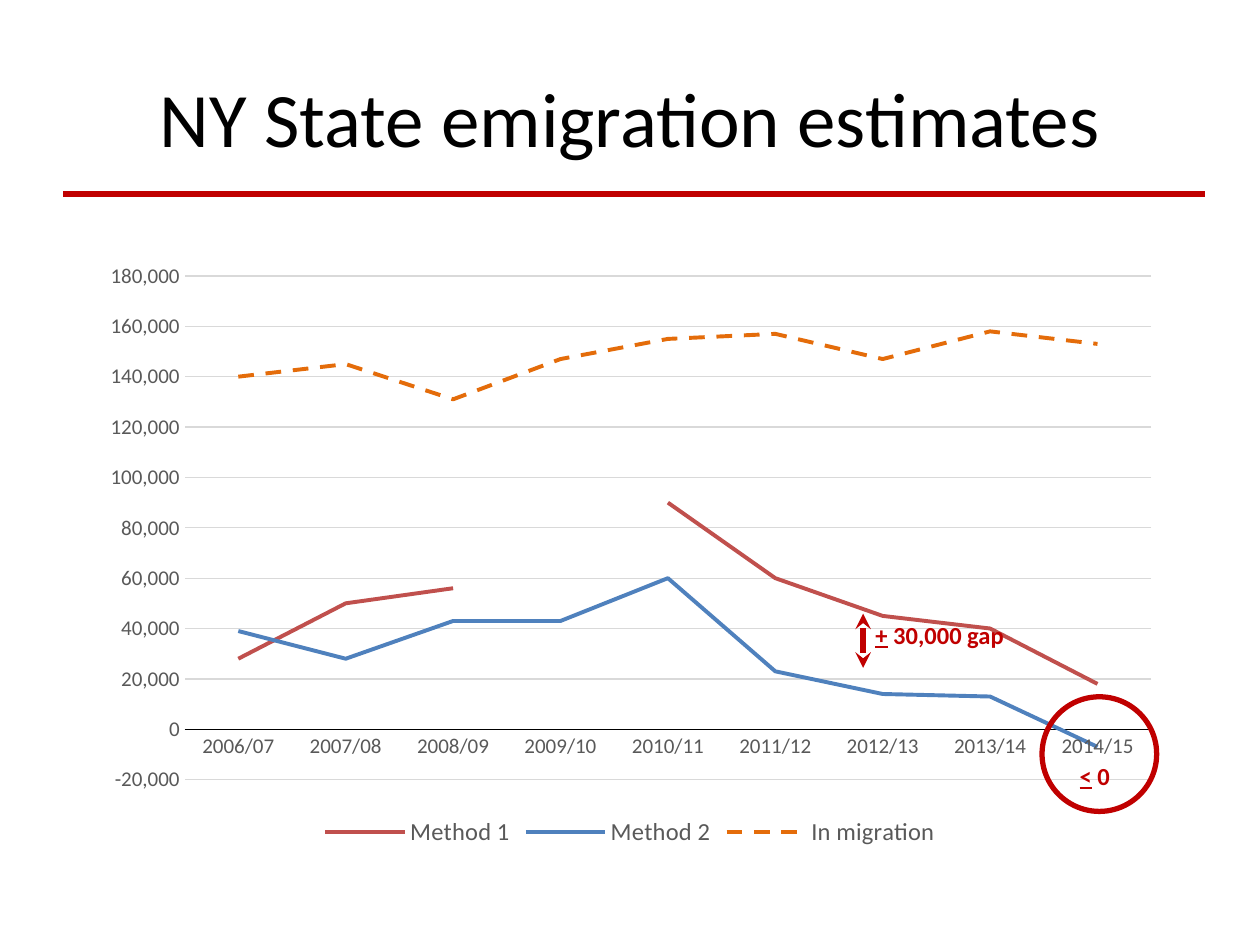
from pptx import Presentation
from pptx.chart.data import CategoryChartData
from pptx.dml.color import RGBColor
from pptx.enum.chart import XL_CHART_TYPE as ChartType, XL_LEGEND_POSITION as LegendPosition
from pptx.enum.chart import XL_TICK_MARK as TickMark
from pptx.enum.dml import MSO_LINE_DASH_STYLE as Dash
from pptx.enum.shapes import MSO_CONNECTOR_TYPE as ConnectorType, MSO_SHAPE as Shape
from pptx.enum.text import MSO_ANCHOR as Anchor, MSO_AUTO_SIZE as AutoSize, PP_ALIGN as Align
from pptx.oxml import parse_xml
from pptx.oxml.ns import nsdecls
from pptx.oxml.xmlchemy import OxmlElement
from pptx.util import Inches, Pt

FONT = "Calibri"
BLACK = RGBColor(0x00, 0x00, 0x00)
GRAY = RGBColor(0x59, 0x59, 0x59)
GRID = RGBColor(0xD9, 0xD9, 0xD9)
CRIMSON = RGBColor(0xC0, 0x00, 0x00)
RED = RGBColor(0xC0, 0x50, 0x4D)
BLUE = RGBColor(0x4F, 0x81, 0xBD)
ORANGE = RGBColor(0xE4, 0x6C, 0x0A)

YEARS = [f"{year}/{(year + 1) % 100:02d}" for year in range(2006, 2015)]
SERIES = [
    ("Method 1", RED, Dash.SOLID,
     [28000, 50000, 56000, None, 90000, 60000, 45000, 40000, 18000]),
    ("Method 2", BLUE, Dash.SOLID,
     [39000, 28000, 43000, 43000, 60000, 23000, 14000, 13000, -7000]),
    ("In migration", ORANGE, Dash.DASH,
     [140000, 145000, 131000, 147000, 155000, 157000, 147000, 158000, 153000]),
]


def style_font(font, size, color, bold=False):
    font.name = FONT
    font.size = Pt(size)
    font.bold = bold
    font.color.rgb = color


def style_line(line, color, width):
    line.color.rgb = color
    line.width = Pt(width)


def set_title(slide, text):
    title = slide.shapes.title
    title.left, title.top = Inches(0.5), Inches(0.3)
    title.width, title.height = Inches(9), Inches(1.25)
    frame = title.text_frame
    frame.text = text
    frame.vertical_anchor = Anchor.MIDDLE
    para = frame.paragraphs[0]
    para.alignment = Align.CENTER
    style_font(para.runs[0].font, 44, BLACK)


def add_line(slide, start, end, arrowheads=False):
    points = [Inches(value) for value in (*start, *end)]
    connector = slide.shapes.add_connector(ConnectorType.STRAIGHT, *points)
    style_line(connector.line, CRIMSON, 3)
    if arrowheads:
        outline = connector.line._get_or_add_ln()
        for tag in ("a:headEnd", "a:tailEnd"):
            head = OxmlElement(tag)
            head.set("type", "stealth")
            outline.append(head)
    connector._element.spPr.append(OxmlElement("a:effectLst"))


def add_note(slide, left, top, width, symbol, text):
    """Add a bold note whose leading symbol is underlined."""
    box = slide.shapes.add_textbox(Inches(left), Inches(top), Inches(width), Inches(0.34))
    frame = box.text_frame
    frame.word_wrap = True
    frame.auto_size = AutoSize.SHAPE_TO_FIT_TEXT
    para = frame.paragraphs[0]
    for words, underlined in ((symbol, True), (text, False)):
        span = para.add_run()
        span.text = words
        style_font(span.font, 14, CRIMSON, bold=True)
        span.font.underline = underlined


def add_ring(slide, left, top, diameter):
    ring = slide.shapes.add_shape(Shape.OVAL, Inches(left), Inches(top),
                                  Inches(diameter), Inches(diameter))
    ring.shadow.inherit = False
    ring.fill.background()
    style_line(ring.line, CRIMSON, 3)


def place_plot(chart, **fractions):
    """Fix the inner plot area as fractions of the chart."""
    plot_area = chart._chartSpace.chart.plotArea
    for layout in plot_area.findall(OxmlElement("c:layout").tag):
        plot_area.remove(layout)
    values = "".join(f'<c:{key} val="{value}"/>' for key, value in fractions.items())
    plot_area.insert(0, parse_xml(
        f'<c:layout {nsdecls("c")}><c:manualLayout><c:layoutTarget val="inner"/>'
        f'<c:xMode val="edge"/><c:yMode val="edge"/>{values}</c:manualLayout></c:layout>'))


def style_axes(chart):
    years, counts = chart.category_axis, chart.value_axis
    for axis in (years, counts):
        axis.major_tick_mark = axis.minor_tick_mark = TickMark.NONE
        style_font(axis.tick_labels.font, 12, GRAY)
    style_line(years.format.line, BLACK, 0.75)
    counts.format.line.fill.background()
    counts.minimum_scale, counts.maximum_scale = -20000, 180000
    counts.major_unit = 20000
    counts.has_major_gridlines = True
    style_line(counts.major_gridlines.format.line, GRID, 0.75)
    counts.tick_labels.number_format = "#,##0"
    counts.tick_labels.number_format_is_linked = False


def add_migration_chart(slide):
    data = CategoryChartData(number_format="#,##0")
    data.categories = YEARS
    for name, _, _, values in SERIES:
        data.add_series(name, values)
    chart = slide.shapes.add_chart(ChartType.LINE, Inches(0.69), Inches(2),
                                   Inches(8.62), Inches(4.76), data).chart
    style_font(chart.font, 10, BLACK)
    chart.has_title = False
    chart.has_legend = True
    chart.legend.position = LegendPosition.BOTTOM
    chart.legend.include_in_layout = False
    style_font(chart.legend.font, 14, GRAY)
    style_axes(chart)
    place_plot(chart, x=0.09, y=0.04, w=0.89, h=0.84)
    plot = chart.plots[0]
    plot.vary_by_categories = False
    for series, (_, color, dash, _) in zip(plot.series, SERIES):
        series.smooth = False
        style_line(series.format.line, color, 2.25)
        series.format.line.dash_style = dash


def main():
    deck = Presentation()
    deck.slide_width, deck.slide_height = Inches(10), Inches(7.5)
    slide = deck.slides.add_slide(deck.slide_layouts[5])
    add_line(slide, (0.5, 1.54), (9.56, 1.54))
    set_title(slide, "NY State emigration estimates")
    add_migration_chart(slide)
    add_line(slide, (6.85, 4.87), (6.85, 5.3), arrowheads=True)
    add_note(slide, 6.85, 4.87, 1.4, "+", " 30,000 gap")
    add_note(slide, 8.47, 5.99, 0.66, "<", " 0")
    add_ring(slide, 8.27, 5.53, 0.91)
    deck.save("out.pptx")


if __name__ == "__main__":
    main()
